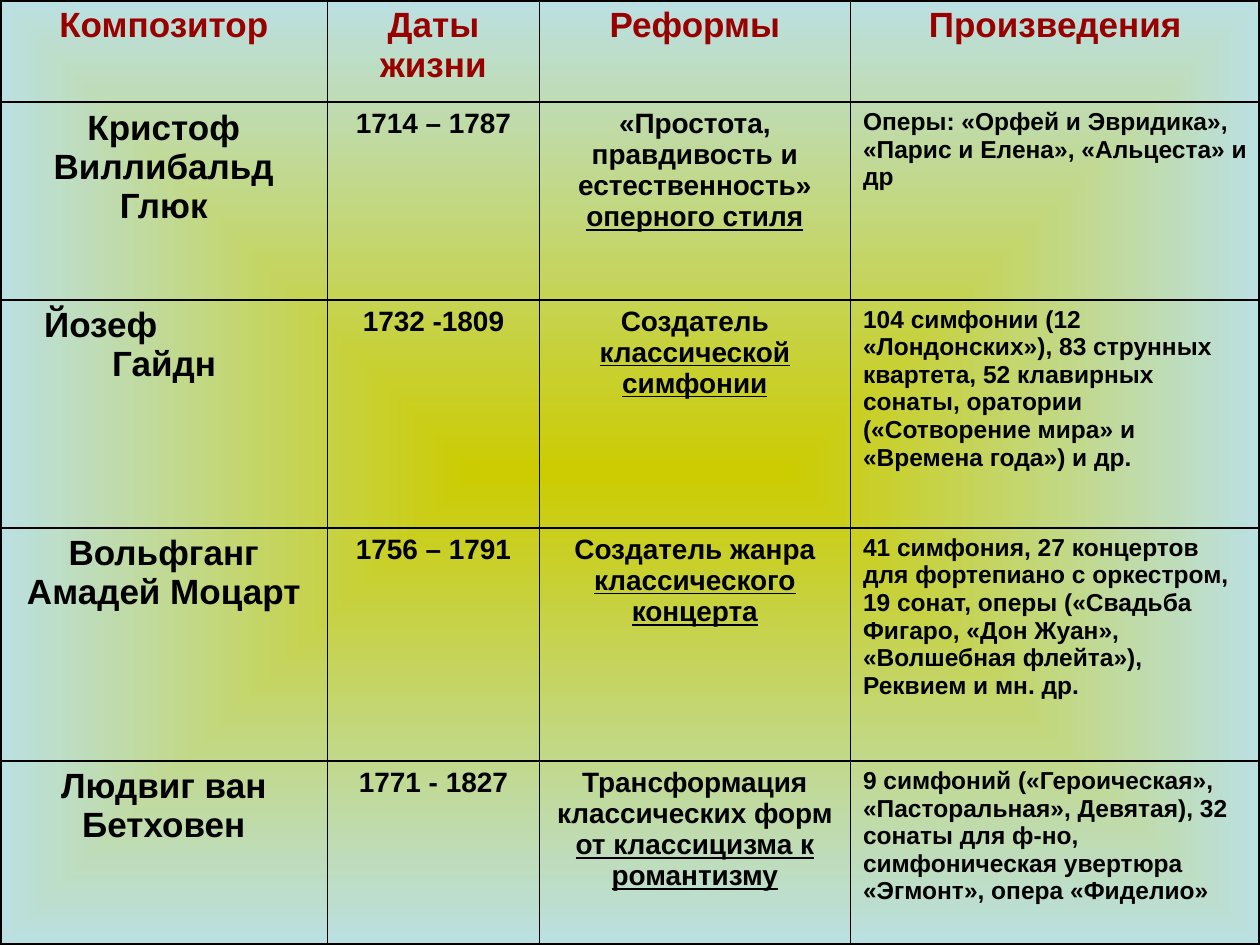
"""Build a slide with a table of composers, their dates, reforms and works."""
import lxml.etree
import pptx
import pptx.dml.color
import pptx.enum.text
import pptx.oxml.ns
import pptx.util

Inches, Pt = pptx.util.Inches, pptx.util.Pt
qn = pptx.oxml.ns.qn
ALIGN = pptx.enum.text.PP_ALIGN

COLORS = {"heading": "990000", "body": "000000", "border": "000000",
          "center": "CCCC00", "edge": "BBE0E3"}
FONT = "Arial"
HEADINGS = ["Композитор", "Даты жизни", "Реформы", "Произведения"]
COMPOSERS = [
    ("Кристоф Виллибальд Глюк", "1714 – 1787",
     ("«Простота, правдивость и естественность» ", "оперного стиля"),
     "Оперы: «Орфей и Эвридика», «Парис и Елена», «Альцеста» и др"),
    ("Йозеф\nГайдн", "1732 -1809",
     ("Создатель ", "классической симфонии"),
     "104 симфонии (12 «Лондонских»), 83 струнных квартета, 52 клавирных сонаты, "
     "оратории («Сотворение мира» и «Времена года») и др."),
    ("Вольфганг Амадей Моцарт", "1756 – 1791",
     ("Создатель жанра ", "классического концерта"),
     "41 симфония, 27 концертов для фортепиано с оркестром, 19 сонат, оперы "
     "(«Свадьба Фигаро, «Дон Жуан», «Волшебная флейта»), Реквием и мн. др."),
    ("Людвиг ван Бетховен", "1771 - 1827",
     ("Трансформация классических форм ", "от классицизма к романтизму"),
     "9 симфоний («Героическая», «Пасторальная», Девятая), 32 сонаты для ф-но, "
     "симфоническая увертюра «Эгмонт», опера «Фиделио»"),
]
COLUMN_WIDTHS = [2.6, 1.68, 2.47, 3.25]
ROW_HEIGHTS = [0.81, 1.57, 1.81, 1.85, 1.46]
COLUMN_SIZES = [20, 16, 16, 14]
HEADING_SIZE = 20
INNER_LINE, OUTER_LINE = 1, 2.25
NAME_INDENT, NAME_HANGING = 0.79, -0.54


def rgb(role):
    return pptx.dml.color.RGBColor.from_string(COLORS[role])


def paint_background(slide):
    fill = slide.background.fill
    fill.gradient()
    for stop, role in zip(fill.gradient_stops, ("center", "edge")):
        stop.color.rgb = rgb(role)
    gradient = next(slide.element.iter(qn("a:gradFill")))
    gradient.remove(gradient.find(qn("a:lin")))
    shape_path = lxml.etree.SubElement(gradient, qn("a:path"), path="shape")
    lxml.etree.SubElement(shape_path, qn("a:fillToRect"),
                          {side: "50000" for side in "ltrb"})


def draw_borders(cell, outer_sides):
    properties = cell._tc.get_or_add_tcPr()
    for side, is_outer in zip("LRTB", outer_sides):
        width = Pt(OUTER_LINE if is_outer else INNER_LINE)
        line = lxml.etree.SubElement(properties, qn(f"a:ln{side}"), w=str(int(width)))
        solid = lxml.etree.SubElement(line, qn("a:solidFill"))
        lxml.etree.SubElement(solid, qn("a:srgbClr"), val=COLORS["border"])
    cell.fill.background()


def add_text(paragraph, text, size, role, underline):
    for index, line in enumerate(text.split("\n")):
        if index:
            paragraph.add_line_break()
        run = paragraph.add_run()
        run.text = line
        run.font.name, run.font.size, run.font.bold = FONT, Pt(size), True
        run.font.color.rgb = rgb(role)
        if underline:
            run.font.underline = True


def fill_cell(cell, content, size, role, alignment):
    paragraph = cell.text_frame.paragraphs[0]
    paragraph.alignment = alignment
    parts = (content,) if isinstance(content, str) else content
    if "\n" in parts[0]:
        paragraph.alignment = ALIGN.LEFT
        indents = paragraph._p.get_or_add_pPr()
        indents.set("marL", str(int(Inches(NAME_INDENT))))
        indents.set("indent", str(int(Inches(NAME_HANGING))))
    for index, text in enumerate(parts):
        add_text(paragraph, text, size, role, index == 1)


def main():
    deck = pptx.Presentation()
    deck.slide_width, deck.slide_height = Inches(10), Inches(7.5)
    slide = deck.slides.add_slide(deck.slide_layouts[6])
    paint_background(slide)

    rows = [HEADINGS, *COMPOSERS]
    last_row, last_column = len(rows) - 1, len(HEADINGS) - 1
    table = slide.shapes.add_table(len(rows), len(HEADINGS), 0, 0,
                                   Inches(10), Inches(7.5)).table
    table.first_row = table.horz_banding = False
    for column, width in zip(table.columns, COLUMN_WIDTHS):
        column.width = Inches(width)
    for row, height in zip(table.rows, ROW_HEIGHTS):
        row.height = Inches(height)

    for r, row in enumerate(rows):
        for c, content in enumerate(row):
            cell = table.cell(r, c)
            draw_borders(cell, (c == 0, c == last_column, r == 0, r == last_row))
            heading = r == 0
            fill_cell(cell, content,
                      HEADING_SIZE if heading else COLUMN_SIZES[c],
                      "heading" if heading else "body",
                      ALIGN.LEFT if c == last_column and not heading else ALIGN.CENTER)
    deck.save("out.pptx")


if __name__ == "__main__":
    main()
